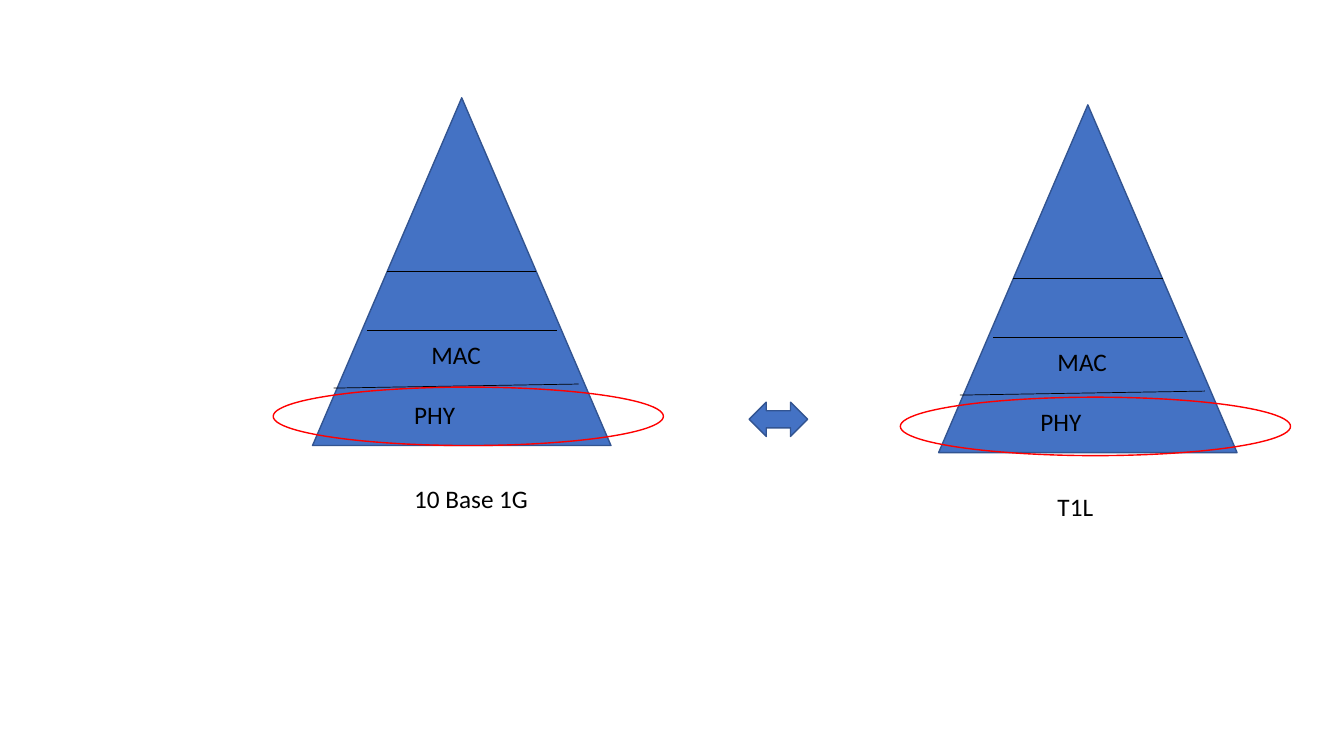
from pptx import Presentation
from pptx.dml.color import RGBColor
from pptx.enum.shapes import MSO_CONNECTOR, MSO_SHAPE
from pptx.enum.text import MSO_AUTO_SIZE
from pptx.oxml.ns import qn
from pptx.util import Emu, Pt
from lxml.etree import SubElement

BLUE, DARK_BLUE, RED, BLACK = "4472C4", "325491", "FF0000", "000000"

# Each stack: pyramid corner, then caption and ellipse relative to that corner
STACKS = [
    {"corner": (931, 104), "caption": ("T1L", 108, 379, 56), "ellipse": (-38, 290)},
    {"corner": (310, 97), "caption": ("10 Base 1G", 91, 378, 134), "ellipse": (-39, 287)},
]
PYRAMID_SIZE = (296, 345)
ELLIPSE_SIZE = (387, 58)
LAYER_LINES = [(21, 288, 264, 284), (54, 231, 242, 231), (74, 172, 222, 172)]
LAYER_LABELS = [("PHY", 91, 294, 102, True), ("MAC", 108, 235, 70, False)]
ARROW = (743, 399, 58, 34)
LABEL_HEIGHT = 40


def px(length):
    """Convert px to EMU at 100 px to the inch."""
    return Emu(length * 9144)


def color(value):
    return RGBColor.from_string(value)


def add_preset(slide, preset, left, top, width, height, line, fill=None):
    shape = slide.shapes.add_shape(preset, px(left), px(top), px(width), px(height))
    shape.shadow.inherit = False
    if fill:
        shape.fill.solid()
        shape.fill.fore_color.rgb = color(fill)
    else:
        shape.fill.background()
    shape.line.color.rgb = color(line)
    shape.line.width = Pt(1)


def add_line(slide, x1, y1, x2, y2):
    connector = slide.shapes.add_connector(
        MSO_CONNECTOR.STRAIGHT, px(x1), px(y1), px(x2), px(y2))
    connector.line.color.rgb = color(BLACK)
    connector.line.width = Pt(0.5)
    SubElement(connector._element.spPr, qn("a:effectLst"))


def add_label(slide, text, left, top, width, wrap=False):
    box = slide.shapes.add_textbox(px(left), px(top), px(width), px(LABEL_HEIGHT))
    box.text_frame.word_wrap = wrap
    box.text_frame.auto_size = MSO_AUTO_SIZE.SHAPE_TO_FIT_TEXT
    run = box.text_frame.paragraphs[0].add_run()
    run.text = text
    run.font.name = "Calibri"
    run.font.size = Pt(18)
    run.font.color.rgb = color(BLACK)


def add_stack(slide, stack):
    x, y = stack["corner"]
    add_preset(slide, MSO_SHAPE.ISOSCELES_TRIANGLE, x, y, *PYRAMID_SIZE, DARK_BLUE, BLUE)
    for x1, y1, x2, y2 in LAYER_LINES:
        add_line(slide, x + x1, y + y1, x + x2, y + y2)
    for text, dx, dy, width, wrap in LAYER_LABELS:
        add_label(slide, text, x + dx, y + dy, width, wrap)
    text, dx, dy, width = stack["caption"]
    add_label(slide, text, x + dx, y + dy, width)


def main():
    presentation = Presentation()
    presentation.slide_width, presentation.slide_height = px(1333), px(750)
    slide = presentation.slides.add_slide(presentation.slide_layouts[6])
    for stack in STACKS:
        add_stack(slide, stack)
    for stack in STACKS:
        (x, y), (dx, dy) = stack["corner"], stack["ellipse"]
        add_preset(slide, MSO_SHAPE.OVAL, x + dx, y + dy, *ELLIPSE_SIZE, RED)
    add_preset(slide, MSO_SHAPE.LEFT_RIGHT_ARROW, *ARROW, DARK_BLUE, BLUE)
    presentation.save("out.pptx")


if __name__ == "__main__":
    main()
